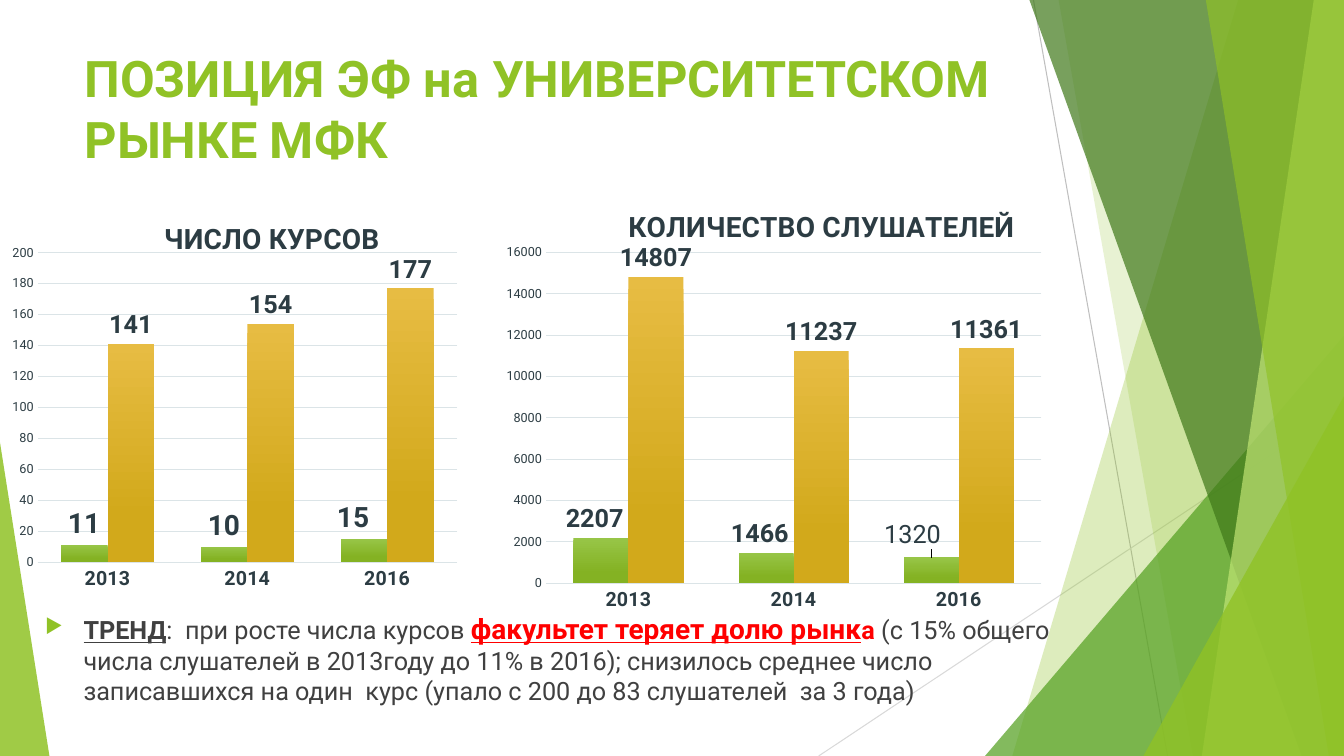
from lxml import etree
from pptx import Presentation
from pptx.chart.data import CategoryChartData
from pptx.dml.color import RGBColor
from pptx.enum.chart import XL_CHART_TYPE, XL_LABEL_POSITION, XL_TICK_MARK
from pptx.enum.shapes import MSO_CONNECTOR, MSO_SHAPE
from pptx.oxml.ns import qn
from pptx.util import Inches, Pt

COLUMNS = XL_CHART_TYPE.COLUMN_CLUSTERED
OUTSIDE_END = XL_LABEL_POSITION.OUTSIDE_END
NO_TICKS = XL_TICK_MARK.NONE
STRAIGHT = MSO_CONNECTOR.STRAIGHT
TRIANGLE = MSO_SHAPE.ISOSCELES_TRIANGLE
FONT = "Roboto"
COLORS = {
    "lime": "90C226", "green": "54A021", "forest": "3F7819", "pale": "C0E474",
    "gray": "BFBFBF", "silver": "D9D9D9", "grid": "DBE4E7", "slate": "2C3C43",
    "text": "404040", "red": "FF0000",
}
GRADIENTS = [("97C547", "84B223"), ("E7BC43", "D2A91B")]
WIDTH, HEIGHT = 13.33, 7.5


def style_font(font, size, color, bold=False, underline=None):
    font.name = FONT
    font.size = Pt(size)
    font.bold = bold
    font.underline = underline
    font.color.rgb = RGBColor.from_string(COLORS[color])


def set_layout(parent, index, **values):
    for old in parent.findall(qn("c:layout")):
        parent.remove(old)
    layout = etree.Element(qn("c:layout"))
    manual = etree.SubElement(layout, qn("c:manualLayout"))
    for name, value in values.items():
        etree.SubElement(manual, qn("c:" + name), val=str(value))
    parent.insert(index, layout)


presentation = Presentation()
presentation.slide_width = Inches(WIDTH)
presentation.slide_height = Inches(HEIGHT)
slide = presentation.slides.add_slide(presentation.slide_layouts[6])

for x1, y1, x2, y2, color in [
    (10.25, 0, 11.58, HEIGHT, "gray"),
    (WIDTH, 4.03, 8.12, HEIGHT, "silver"),
]:
    line = slide.shapes.add_connector(STRAIGHT, Inches(x1), Inches(y1), Inches(x2), Inches(y2))
    line.line.width = Pt(0.75)
    line.line.color.rgb = RGBColor.from_string(COLORS[color])
    etree.SubElement(line._element.spPr, qn("a:effectLst"))

facets = [
    ("band", 12.28, 10.04, "lime", 30),
    ("band", 10.5, 11.83, "lime", 20),
    ("triangle", 9.77, 3.33, 3.56, 1, "green", 72),
    ("band", 10.21, 12.91, "forest", 70),
    ("band", 13.03, 11.92, "pale", 70),
    ("band", 11.96, 13.18, "lime", 65),
    ("triangle", 11.34, 3.93, 1.99, 1, "lime", 80),
    ("triangle", 0, 4.39, 0.49, 0, "lime", 85),
]
for kind, *geometry, color, opacity in facets:
    if kind == "band":
        top_x, bottom_x = geometry
        builder = slide.shapes.build_freeform(Inches(top_x), 0, scale=1.0)
        corners = [(WIDTH, 0), (WIDTH, HEIGHT), (bottom_x, HEIGHT)]
        builder.add_line_segments([(Inches(x), Inches(y)) for x, y in corners], close=True)
        shape = builder.convert_to_shape()
    else:
        left, top, width, apex = geometry
        shape = slide.shapes.add_shape(
            TRIANGLE, Inches(left), Inches(top), Inches(width), Inches(HEIGHT - top))
        shape.adjustments[0] = apex
    shape.shadow.inherit = False
    shape.line.fill.background()
    shape.fill.solid()
    shape.fill.fore_color.rgb = RGBColor.from_string(COLORS[color])
    tint = shape._element.spPr.find(qn("a:solidFill"))[0]
    etree.SubElement(tint, qn("a:alpha"), val=str(opacity * 1000))

title = slide.shapes.add_textbox(Inches(0.74), Inches(0.42), Inches(10.37), Inches(1.3))
title.text_frame.word_wrap = True
run = title.text_frame.paragraphs[0].add_run()
run.text = "ПОЗИЦИЯ ЭФ на УНИВЕРСИТЕТСКОМ РЫНКЕ МФК"
style_font(run.font, 36, "lime", True)

trend = slide.shapes.add_textbox(Inches(0.35), Inches(6.02), Inches(10.65), Inches(1.1))
trend.text_frame.word_wrap = True
paragraph = trend.text_frame.paragraphs[0]
for text, size, color, bold, underline in [
    ("ТРЕНД", 18, "text", True, True),
    (":  при росте числа курсов ", 18, "text", False, None),
    ("факультет теряет долю рынк", 20, "red", True, True),
    ("а ", 18, "red", True, None),
    ("(с 15% общего числа слушателей в 2013году до 11% в 2016); снизилось среднее число "
     "записавшихся на один  курс (упало с 200 до 83 слушателей  за 3 года)",
     18, "text", False, None),
]:
    run = paragraph.add_run()
    run.text = text
    style_font(run.font, size, color, bold, underline)
properties = paragraph._p.get_or_add_pPr()
properties.set("marL", str(Inches(0.38)))
properties.set("indent", str(-Inches(0.38)))
bullet_color = etree.SubElement(properties, qn("a:buClr"))
etree.SubElement(bullet_color, qn("a:srgbClr"), val=COLORS["lime"])
etree.SubElement(properties, qn("a:buSzPct"), val="80000")
etree.SubElement(properties, qn("a:buChar"), char="▶")

charts = [
    {"title": "ЧИСЛО КУРСОВ", "title_at": (0.3, 0.05), "frame": (0, 1.93, 5.26, 4.05),
     "plot": (0.071, 0.143, 0.791, 0.758), "maximum": 200, "step": 20,
     "values": [(11, 10, 15), (141, 154, 177)], "label_sizes": (20, 18),
     "moved": [(2, -0.02, 0, None)]},
    {"title": "КОЛИЧЕСТВО СЛУШАТЕЛЕЙ", "title_at": (0.22, 0.02), "frame": (4.82, 1.93, 6.19, 4.23),
     "plot": (0.096, 0.136, 0.794, 0.776), "maximum": 16000, "step": 2000,
     "values": [(2207, 1466, 1247), (14807, 11237, 11361)], "label_sizes": (18, 18),
     "moved": [(0, -0.01, 0, None), (1, -0.01, 0, None), (2, -0.03, -0.01, "1320")]},
]
for item in charts:
    data = CategoryChartData()
    data.categories = ["2013", "2014", "2016"]
    for number, values in enumerate(item["values"], 1):
        data.add_series(f"Series {number}", values)
    frame = [Inches(length) for length in item["frame"]]
    chart = slide.shapes.add_chart(COLUMNS, *frame, data).chart
    style_font(chart.font, 10, "slate")
    chart.has_legend = False

    run = chart.chart_title.text_frame.paragraphs[0].add_run()
    run.text = item["title"]
    style_font(run.font, 20, "slate", True)
    chart.chart_title.include_in_layout = False
    x, y = item["title_at"]
    set_layout(chart.chart_title._element, 1, xMode="edge", yMode="edge", x=x, y=y)
    x, y, w, h = item["plot"]
    set_layout(chart._chartSpace.chart.plotArea, 0, layoutTarget="inner",
               xMode="edge", yMode="edge", x=x, y=y, w=w, h=h)

    category_axis, value_axis = chart.category_axis, chart.value_axis
    for axis, size, bold in [(category_axis, 14, True), (value_axis, 9, False)]:
        axis.major_tick_mark = NO_TICKS
        axis.minor_tick_mark = NO_TICKS
        style_font(axis.tick_labels.font, size, "slate", bold)
    value_axis.minimum_scale = 0
    value_axis.maximum_scale = item["maximum"]
    value_axis.major_unit = item["step"]
    value_axis.format.line.fill.background()
    for line in (category_axis.format.line, value_axis.major_gridlines.format.line):
        line.width = Pt(0.75)
        line.color.rgb = RGBColor.from_string(COLORS["grid"])

    plot = chart.plots[0]
    plot.gap_width = 100
    plot.overlap = 0
    plot.vary_by_categories = False
    for series, shades, size in zip(plot.series, GRADIENTS, item["label_sizes"]):
        fill = series.format.fill
        fill.gradient()
        fill.gradient_angle = 270
        for stop, shade, position in zip(fill.gradient_stops, shades, (0, 0.78)):
            stop.color.rgb = RGBColor.from_string(shade)
            stop.position = position
        labels = series.data_labels
        labels.show_value = True
        labels.position = OUTSIDE_END
        style_font(labels.font, size, "slate", True)

    small_series = plot.series[0]
    for index, x, y, text in item["moved"]:
        label = small_series.points[index].data_label
        if text:
            run = label.text_frame.paragraphs[0].add_run()
            run.text = text
            style_font(run.font, 18, "slate")
        else:
            style_font(label.font, item["label_sizes"][0], "slate", True)
        label.position = OUTSIDE_END
        label_element = small_series._element.xpath(f"c:dLbls/c:dLbl[c:idx/@val={index}]")[0]
        set_layout(label_element, 1, x=x, y=y)

presentation.save("out.pptx")
